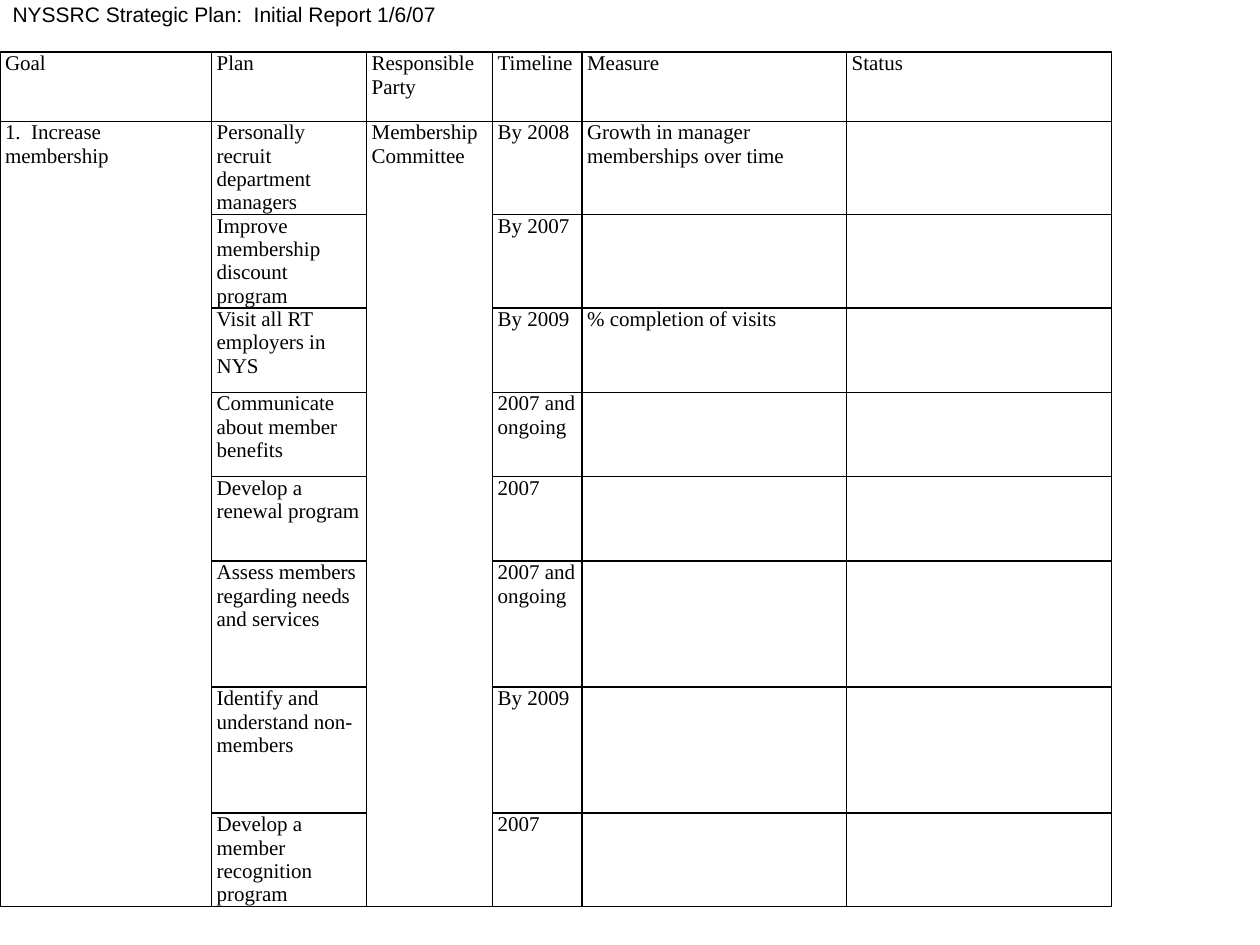
from lxml import etree
from pptx import Presentation
from pptx.dml.color import RGBColor
from pptx.enum.text import MSO_ANCHOR, PP_ALIGN
from pptx.oxml.ns import qn
from pptx.util import Inches, Pt

TOP, LEFT = MSO_ANCHOR.TOP, PP_ALIGN.LEFT
COLORS = {"text": "000000", "border": "000000"}
TITLE_FONT, TABLE_FONT = "Arial", "Times New Roman"

COL_WIDTHS = [1.68, 1.23, 1, 0.71, 2.1, 2.1]
ROW_HEIGHTS = [0.55, 0.74, 0.74, 0.67, 0.67, 0.67, 1, 1, 0.74]
HEADER = ["Goal", "Plan", "Responsible\nParty", "Timeline", "Measure", "Status"]
GOAL, PARTY = "1.  Increase membership", "Membership Committee"
STEPS = [
    ("Personally recruit department managers", "By 2008",
     "Growth in manager memberships over time"),
    ("Improve membership discount program", "By 2007", ""),
    ("Visit all RT employers in NYS", "By 2009", "% completion of visits"),
    ("Communicate about member benefits", "2007 and ongoing", ""),
    ("Develop a renewal program", "2007", ""),
    ("Assess members regarding needs and services", "2007 and ongoing", ""),
    ("Identify and understand non-members", "By 2009", ""),
    ("Develop a member recognition program", "2007", ""),
]


def write(tf, text, font=TABLE_FONT, size=12, color="text"):
    """Fill a text frame, one paragraph per line of text."""
    tf.text = text
    for p in tf.paragraphs:
        p.alignment = LEFT
        p.font.size = Pt(size)
        for r in p.runs:
            r.font.name = font
            r.font.size = Pt(size)
            r.font.color.rgb = RGBColor.from_string(COLORS[color])


def add_borders(cell, width=1):
    tc_pr = cell._tc.get_or_add_tcPr()
    for i, side in enumerate(("lnL", "lnR", "lnT", "lnB")):
        ln = etree.Element(qn(f"a:{side}"), w=str(Pt(width)))
        fill = etree.SubElement(ln, qn("a:solidFill"))
        etree.SubElement(fill, qn("a:srgbClr"), val=COLORS["border"])
        tc_pr.insert(i, ln)


class PlanSlide:
    def __init__(self, prs):
        self.prs = prs
        self.slide = prs.slides.add_slide(prs.slide_layouts[5])

    def title(self, text, height):
        """Place the title across the top; height is a share of the slide."""
        sp = self.slide.shapes.title
        sp.left, sp.top = 0, 0
        sp.width, sp.height = self.prs.slide_width, int(self.prs.slide_height * height)
        tf = sp.text_frame
        tf.vertical_anchor = TOP
        tf.margin_top = Inches(0.01)
        tf.margin_left = Inches(0.1)
        write(tf, text, font=TITLE_FONT)

    def table(self, rows, top, spans):
        """Draw rows from the left edge; spans are columns merged below the header."""
        table = self.slide.shapes.add_table(
            len(rows), len(COL_WIDTHS), 0, int(self.prs.slide_height * top),
            Inches(sum(COL_WIDTHS)), Inches(sum(ROW_HEIGHTS))).table
        table.first_row = table.horz_banding = False
        for col, width in zip(table.columns, COL_WIDTHS):
            col.width = Inches(width)
        for row, height, texts in zip(table.rows, ROW_HEIGHTS, rows):
            row.height = Inches(height)
            for cell, text in zip(row.cells, texts):
                cell.margin_left = cell.margin_right = Inches(0.04)
                cell.margin_top = cell.margin_bottom = 0
                cell.vertical_anchor = TOP
                cell.fill.background()
                add_borders(cell)
                write(cell.text_frame, text)
        for c in spans:
            table.cell(1, c).merge(table.cell(len(rows) - 1, c))


def main():
    prs = Presentation()
    prs.slide_width, prs.slide_height = Inches(10), Inches(7.5)
    s = PlanSlide(prs)
    s.title("NYSSRC Strategic Plan:  Initial Report 1/6/07", height=0.07)
    rows = [HEADER]
    for i, (plan, timeline, measure) in enumerate(STEPS):
        goal, party = (GOAL, PARTY) if i == 0 else ("", "")
        rows.append([goal, plan, party, timeline, measure, ""])
    s.table(rows, top=0.055, spans=(0, 2))
    prs.save("out.pptx")


if __name__ == "__main__":
    main()
